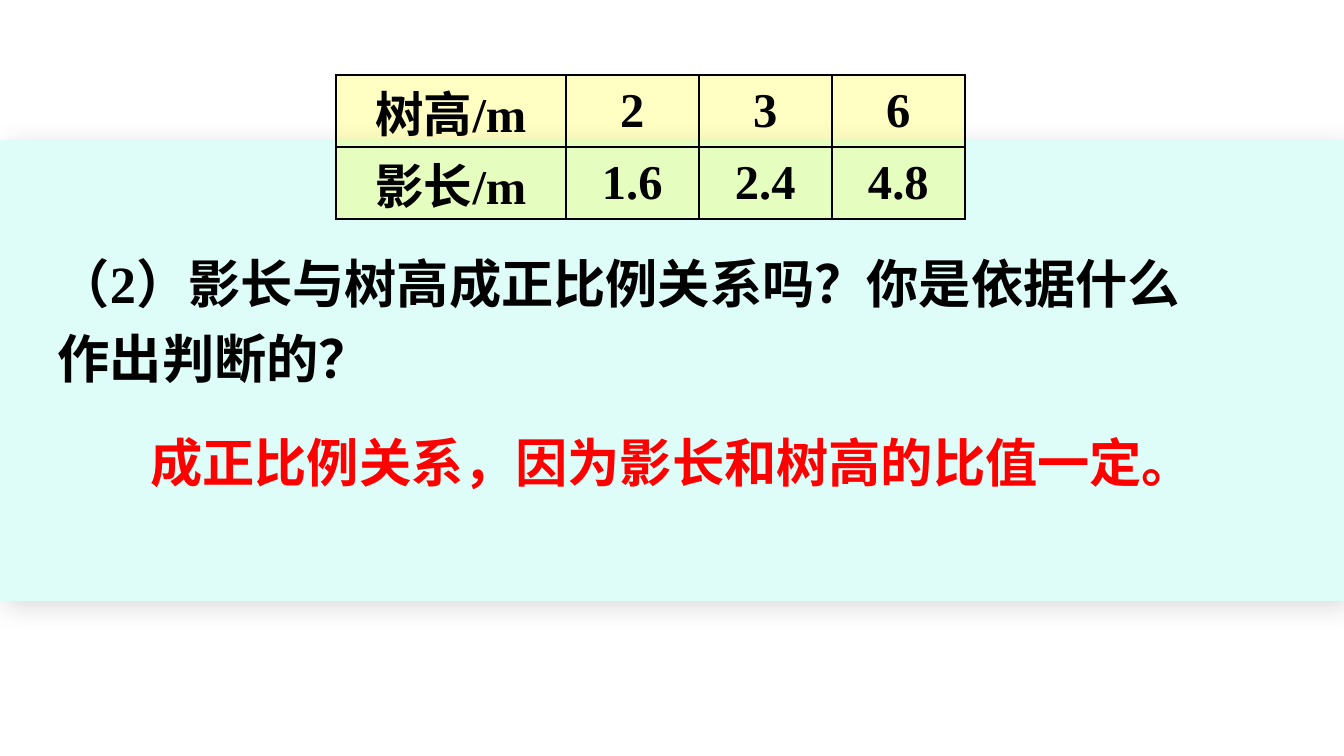
from pptx import Presentation
from pptx.dml.color import RGBColor as RGB
from pptx.enum.shapes import MSO_SHAPE as Kind
from pptx.enum.text import MSO_ANCHOR as Anchor, MSO_AUTO_SIZE as Fit, PP_ALIGN as Align
from pptx.oxml import parse_xml
from pptx.oxml.ns import qn
from pptx.util import Inches, Pt
from lxml.etree import SubElement as Sub

COLORS = {"band": "DEFDF8", "ink": "000000", "answer": "FF0000", "cell": "FFFF00"}
SERIF, SANS = "Times New Roman", "Noto Sans CJK SC"
NS = "http://schemas.openxmlformats.org/drawingml/2006/main"


def write(frame, text, size=28, font=SERIF, color="ink", align=Align.LEFT, lead=None):
    """Put one bold formatted paragraph into a text frame."""
    para = frame.paragraphs[0]
    para.alignment, para.line_spacing = align, lead
    run = para.add_run()
    run.text = text
    run.font.size, run.font.name, run.font.bold = Pt(size), font, True
    run.font.color.rgb = RGB.from_string(COLORS[color])


class Deck:
    """Hold the style and the current slide, with lengths as shares of its size."""

    def __init__(self, wide, high):
        self.prs = Presentation()
        self.prs.slide_width, self.prs.slide_height = Inches(wide), Inches(high)
        self.slide = self.prs.slides.add_slide(self.prs.slide_layouts[5])
        self.shapes = self.slide.shapes

    def area(self, left, top, wide, high):
        w, h = self.prs.slide_width, self.prs.slide_height
        return tuple(int(n / 100 * d) for n, d in zip((left, top, wide, high), (w, h, w, h)))

    def band(self, *box):
        rect = self.shapes.add_shape(Kind.RECTANGLE, *self.area(*box))
        rect.fill.solid()
        rect.fill.fore_color.rgb = RGB.from_string(COLORS["band"])
        rect.line.fill.background()
        rect._element.spPr.append(parse_xml(
            f'<a:effectLst xmlns:a="{NS}"><a:outerShdw blurRad="{Pt(15)}" dist="{Pt(5)}" '
            f'dir="2700000" algn="ctr" rotWithShape="0"><a:srgbClr val="{COLORS["ink"]}">'
            '<a:alpha val="15000"/></a:srgbClr></a:outerShdw></a:effectLst>'))
        self.shapes._spTree.insert(2, rect._element)

    def place(self, shape, box, text, **style):
        shape.left, shape.top, shape.width, shape.height = self.area(*box)
        frame = shape.text_frame
        frame.word_wrap, frame.auto_size = True, Fit.NONE
        frame.vertical_anchor = Anchor.TOP
        write(frame, text, **style)

    def title(self, box, text, **style):
        self.place(self.shapes.title, box, text, **style)

    def text(self, box, text, **style):
        self.place(self.shapes.add_textbox(*self.area(*box)), box, text, **style)

    def table(self, box, rows, shares):
        area = self.area(*box)
        grid = self.shapes.add_table(len(rows), len(shares), *area).table
        grid.first_row = grid.horz_banding = False
        for col, share in zip(grid.columns, shares):
            col.width = int(area[2] * share / sum(shares))
        for r, row in enumerate(rows):
            for c, text in enumerate(row):
                self.cell(grid.cell(r, c), text)

    def cell(self, cell, text):
        cell.vertical_anchor = Anchor.MIDDLE
        cell.margin_top = cell.margin_bottom = 0
        write(cell.text_frame, text, size=26, align=Align.CENTER)
        props = cell._tc.get_or_add_tcPr()
        for side in ("a:lnL", "a:lnR", "a:lnT", "a:lnB"):
            line = Sub(props, qn(side), w=str(Pt(1)))
            Sub(Sub(line, qn("a:solidFill")), qn("a:srgbClr"), val=COLORS["ink"])
        cell.fill.solid()
        cell.fill.fore_color.rgb = RGB.from_string(COLORS["cell"])
        Sub(props.find(f".//{qn('a:srgbClr')}[@val='{COLORS['cell']}']"),
            qn("a:alpha"), val="23000")


def main():
    deck = Deck(10, 5.625)
    deck.band(0, 18.55, 100, 60.95)
    deck.title((3.3, 30.7, 88.9, 21.9),
               "（2）影长与树高成正比例关系吗？你是依据什么作出判断的？", lead=1.2)
    deck.text((10.2, 54.4, 76.4, 11.7), "成正比例关系，因为影长和树高的比值一定。",
              font=SANS, color="answer", lead=1.2)
    deck.table((25, 9.95, 46.8, 19),
               [("树高/m", "2", "3", "6"), ("影长/m", "1.6", "2.4", "4.8")],
               (1.71, 0.99, 0.99, 0.99))
    deck.prs.save("out.pptx")


if __name__ == "__main__":
    main()
